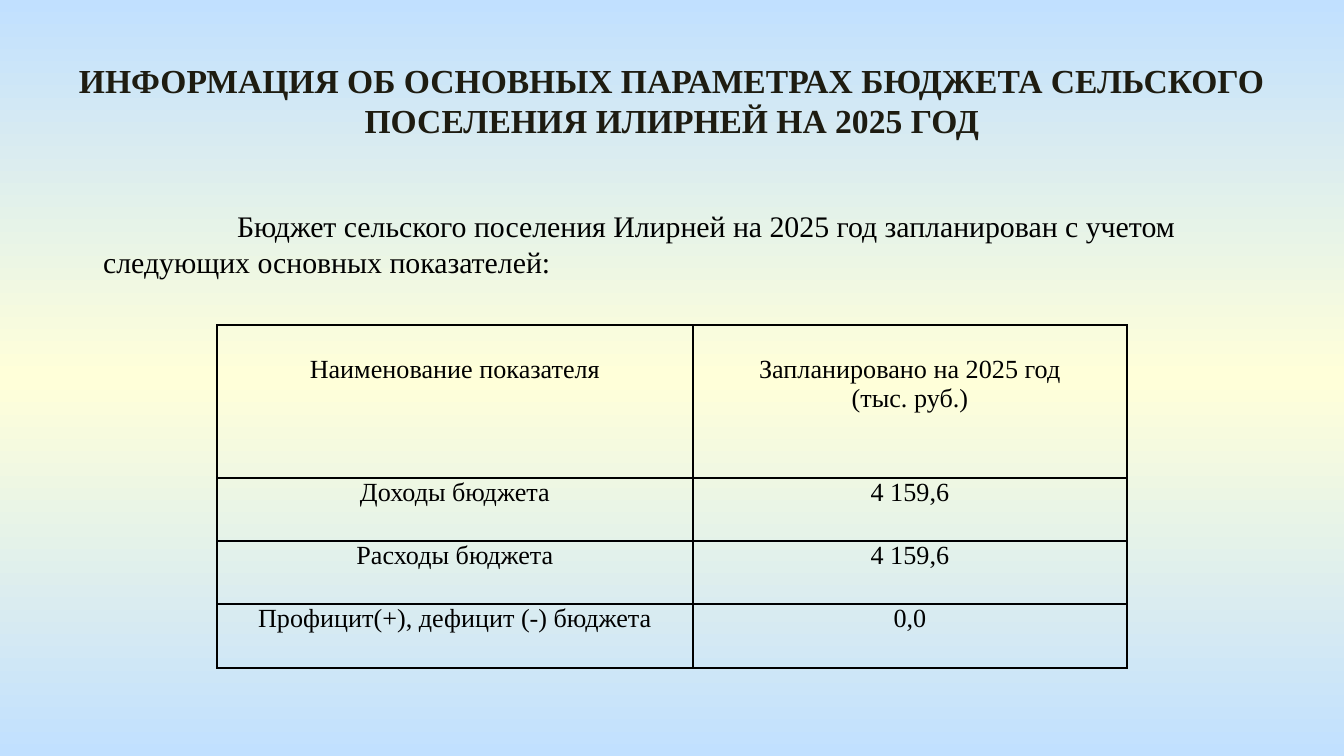
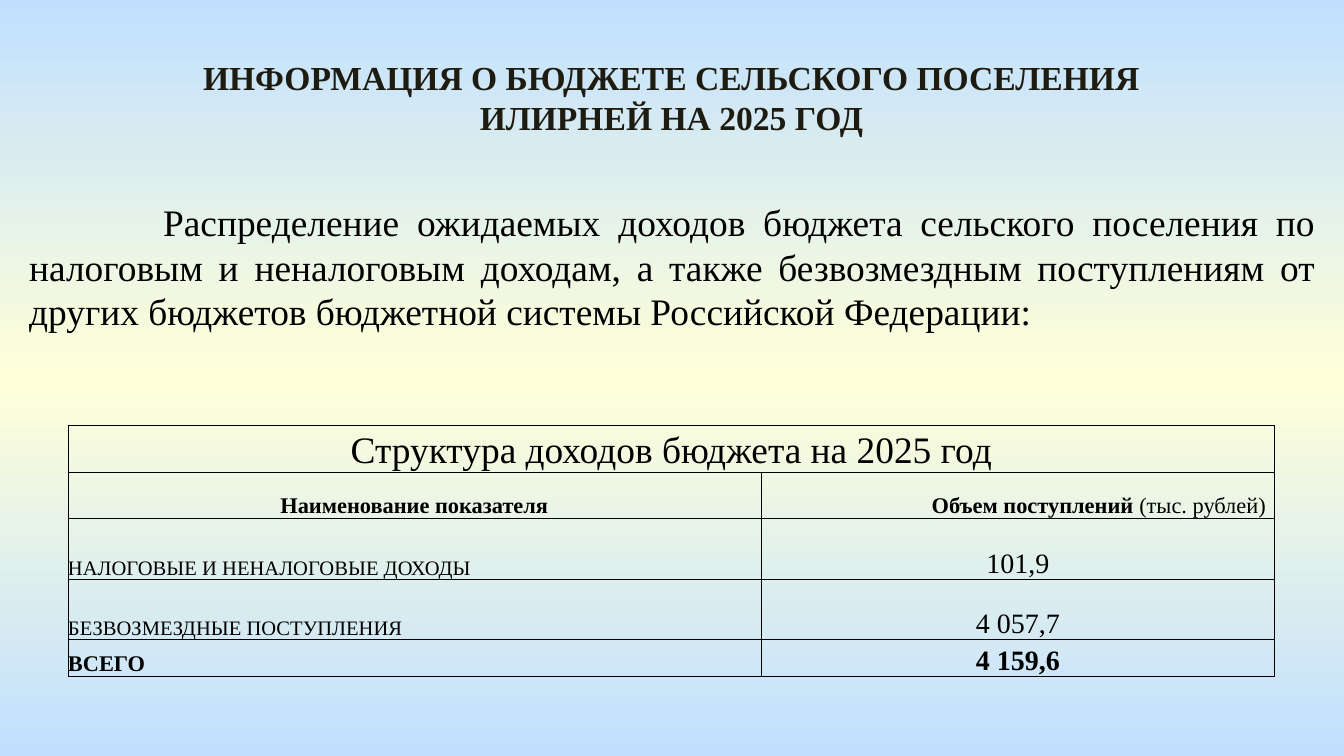
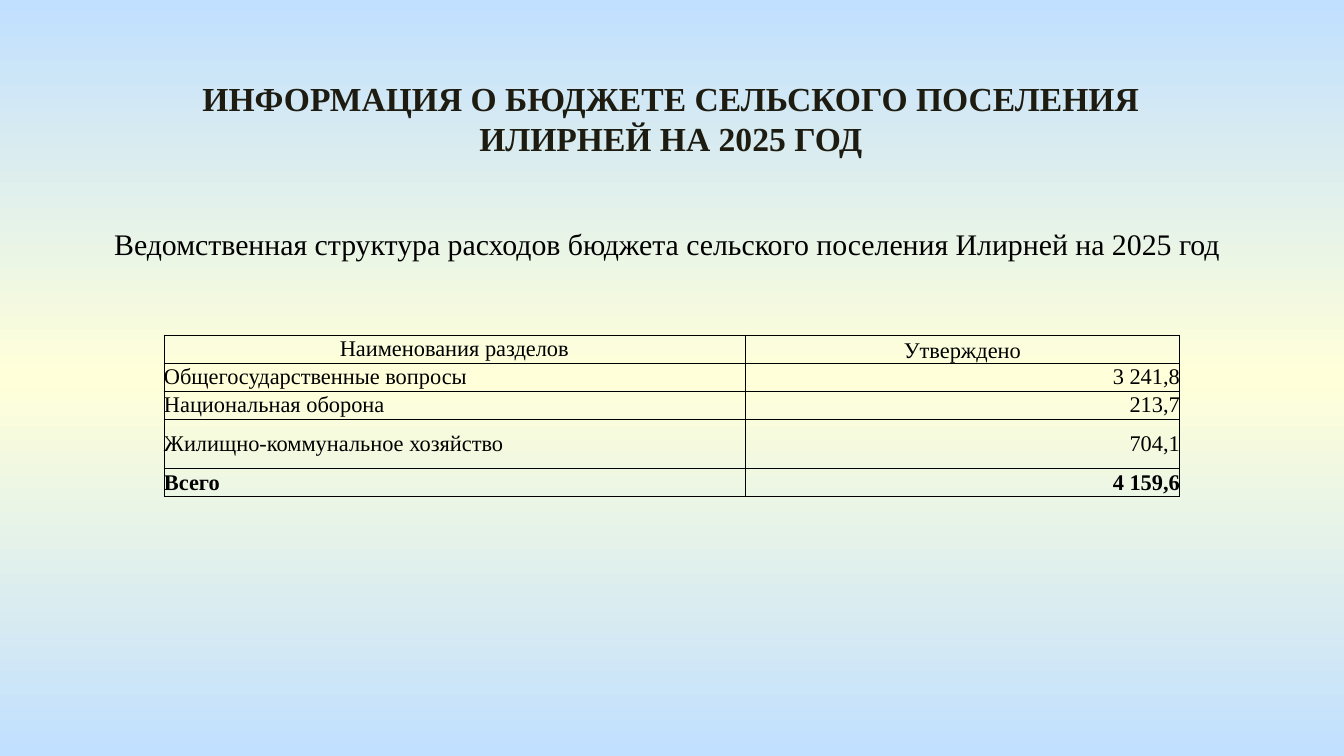
import copy

import pptx
import pptx.dml.color
import pptx.enum.shapes
import pptx.enum.text
import pptx.oxml
import pptx.oxml.ns
import pptx.util
from lxml import etree

PX = 9144000 / 1344
FONT = "Times New Roman"
SKY = pptx.dml.color.RGBColor(0xC1, 0xE0, 0xFF)
CREAM = pptx.dml.color.RGBColor(0xFF, 0xFF, 0xD9)
INK = pptx.dml.color.RGBColor(0x1E, 0x1C, 0x11)
BLACK = pptx.dml.color.RGBColor(0, 0, 0)
ALIGN = pptx.enum.text.PP_ALIGN
ANCHOR = pptx.enum.text.MSO_ANCHOR
qn = pptx.oxml.ns.qn


def write(tf, text, size=12, bold=False, color=BLACK, align=ALIGN.LEFT, append=False):
    """Write each line of text as a paragraph, or append a run to the last one."""
    tf.word_wrap = True
    for i, line in enumerate(text.split("\n")):
        p = tf.paragraphs[-1] if append or i == 0 else tf.add_paragraph()
        p.alignment = align
        r = p.add_run()
        r.text = line
        r.font.name = FONT
        r.font.size = pptx.util.Pt(size)
        r.font.bold = bold
        r.font.color.rgb = color


def add_grid(s, left, top, widths, heights, weight, side=0, anchor=ANCHOR.TOP):
    """Add an unfilled table with black borders of the given weight in points."""
    box = [int(n * PX) for n in (left, top, sum(widths), sum(heights))]
    table = s.shapes.add_table(len(heights), len(widths), *box).table
    table.first_row = table.horz_banding = False
    for col, width in zip(table.columns, widths):
        col.width = int(width * PX)
    for row, height in zip(table.rows, heights):
        row.height = int(height * PX)
    for cell in table.iter_cells():
        cell.margin_left = cell.margin_right = int(side * PX)
        cell.margin_top = cell.margin_bottom = 0
        cell.vertical_anchor = anchor
        tcPr = cell._tc.get_or_add_tcPr()
        for edge in ("a:lnL", "a:lnR", "a:lnT", "a:lnB"):
            ln = etree.SubElement(tcPr, qn(edge), w=str(int(weight * 12700)))
            line_fill = etree.SubElement(ln, qn("a:solidFill"))
            etree.SubElement(line_fill, qn("a:srgbClr"), val=str(BLACK))
        cell.fill.background()
    return table


prs = pptx.Presentation()
prs.slide_width = int(1344 * PX)
prs.slide_height = int(756 * PX)

# Shared background: sky, cream, sky from top to bottom
fill = prs.slide_master.background.fill
fill.gradient()
fill.gradient_angle = 270
stops = next(prs.slide_master.element.iter(qn("a:gsLst")))
stops.insert(1, copy.deepcopy(stops[0]))
for stop, color, position in zip(fill.gradient_stops, (SKY, CREAM, SKY), (0, 0.5, 1)):
    stop.color.rgb = color
    stop.position = position

# Titles
titles = [
    ("ИНФОРМАЦИЯ ОБ ОСНОВНЫХ ПАРАМЕТРАХ БЮДЖЕТА СЕЛЬСКОГО ПОСЕЛЕНИЯ ИЛИРНЕЙ НА 2025 ГОД",
     (47, 53, 1250, 95)),
    ("ИНФОРМАЦИЯ О БЮДЖЕТЕ СЕЛЬСКОГО ПОСЕЛЕНИЯ ИЛИРНЕЙ НА 2025 ГОД", (152, 50, 1039, 95)),
    ("ИНФОРМАЦИЯ О БЮДЖЕТЕ СЕЛЬСКОГО ПОСЕЛЕНИЯ\nИЛИРНЕЙ НА 2025 ГОД", (52, 71, 1238, 95)),
]
slides = []
for text, box in titles:
    s = prs.slides.add_slide(prs.slide_layouts[5])
    title = s.shapes.title
    title.left, title.top, title.width, title.height = [int(n * PX) for n in box]
    tf = title.text_frame
    tf.auto_size = pptx.enum.text.MSO_AUTO_SIZE.NONE
    tf.vertical_anchor = ANCHOR.TOP
    write(tf, text, size=18, bold=True, color=INK, align=ALIGN.CENTER)
    slides.append(s)
parameters, income, spending = slides

# Introductions with an indented first line
intros = [
    (parameters, (90, 196, 1175, 90), 12, 16, ALIGN.LEFT,
     "Бюджет сельского поселения Илирней на 2025 год запланирован с учетом "
     "следующих основных показателей:"),
    (income, (16, 192, 1313, 149), 7, 20, ALIGN.JUSTIFY,
     "Распределение ожидаемых доходов бюджета сельского поселения по налоговым и "
     "неналоговым доходам, а также безвозмездным поступлениям от других бюджетов "
     "бюджетной системы Российской Федерации:"),
]
for s, box, inset, size, align, text in intros:
    sp = s.shapes.add_shape(pptx.enum.shapes.MSO_SHAPE.RECTANGLE, *[int(n * PX) for n in box])
    sp.shadow.inherit = False
    sp.fill.background()
    sp.line.fill.background()
    sp.element.set("useBgFill", "1")
    tf = sp.text_frame
    tf.vertical_anchor = ANCHOR.TOP
    tf.margin_top = int(inset * PX)
    write(tf, text, size=size, align=align)
    tf.paragraphs[0]._p.get_or_add_pPr().set("indent", str(int(134 * PX)))

# Main parameters
rows = [
    ("Наименование показателя", "Запланировано на 2025 год\n(тыс. руб.)"),
    ("Доходы бюджета", "4 159,6"),
    ("Расходы бюджета", "4 159,6"),
    ("Профицит(+), дефицит (-) бюджета", "0,0"),
]
table = add_grid(parameters, 217, 325, (476, 434), (153, 63, 63, 64), 1, side=9)
for i, row in enumerate(rows):
    for j, text in enumerate(row):
        cell = table.cell(i, j)
        write(cell.text_frame, text, size=14, align=ALIGN.CENTER)
        if i == 0:
            cell.margin_top = int(30 * PX)

# Income structure
table = add_grid(income, 68, 425, (693, 514), (47, 46, 62, 60, 37), 0.5, anchor=ANCHOR.BOTTOM)
heading = table.cell(0, 0)
heading.merge(table.cell(0, 1))
write(heading.text_frame, "Структура доходов бюджета на 2025 год", size=20, align=ALIGN.CENTER)
write(table.cell(1, 0).text_frame, "Наименование показателя", bold=True, align=ALIGN.CENTER)
volume = table.cell(1, 1)
volume.margin_left = volume.margin_right = int(9 * PX)
write(volume.text_frame, "Объем поступлений ", bold=True, align=ALIGN.RIGHT)
write(volume.text_frame, "(тыс. рублей)", align=ALIGN.RIGHT, append=True)
rows = [
    ("НАЛОГОВЫЕ И НЕНАЛОГОВЫЕ ДОХОДЫ", "101,9", 11, False),
    ("БЕЗВОЗМЕЗДНЫЕ ПОСТУПЛЕНИЯ", "4 057,7", 11, False),
    ("ВСЕГО", "4 159,6", 12, True),
]
for i, (name, amount, size, bold) in enumerate(rows, 2):
    write(table.cell(i, 0).text_frame, name, size=size, bold=bold)
    write(table.cell(i, 1).text_frame, amount, size=15, bold=bold, align=ALIGN.CENTER)

# Spending structure
caption = spending.shapes.add_textbox(*[int(n * PX) for n in (101, 219, 1142, 86)])
write(caption.text_frame,
      "Ведомственная структура расходов бюджета сельского поселения Илирней на 2025 год",
      size=16, align=ALIGN.JUSTIFY)
rows = [
    ("Наименования разделов", "Утверждено"),
    ("Общегосударственные вопросы", "3 241,8"),
    ("Национальная оборона", "213,7"),
    ("Жилищно-коммунальное хозяйство", "704,1"),
    ("Всего", "4 159,6"),
]
table = add_grid(spending, 164, 335, (581, 435), (28, 28, 28, 50, 28), 0.5, anchor=ANCHOR.MIDDLE)
for i, row in enumerate(rows):
    for j, text in enumerate(row):
        align = ALIGN.CENTER if i == 0 else (ALIGN.LEFT, ALIGN.RIGHT)[j]
        write(table.cell(i, j).text_frame, text, bold=i == len(rows) - 1, align=align)
table.cell(0, 1).vertical_anchor = ANCHOR.BOTTOM

prs.save("out.pptx")
